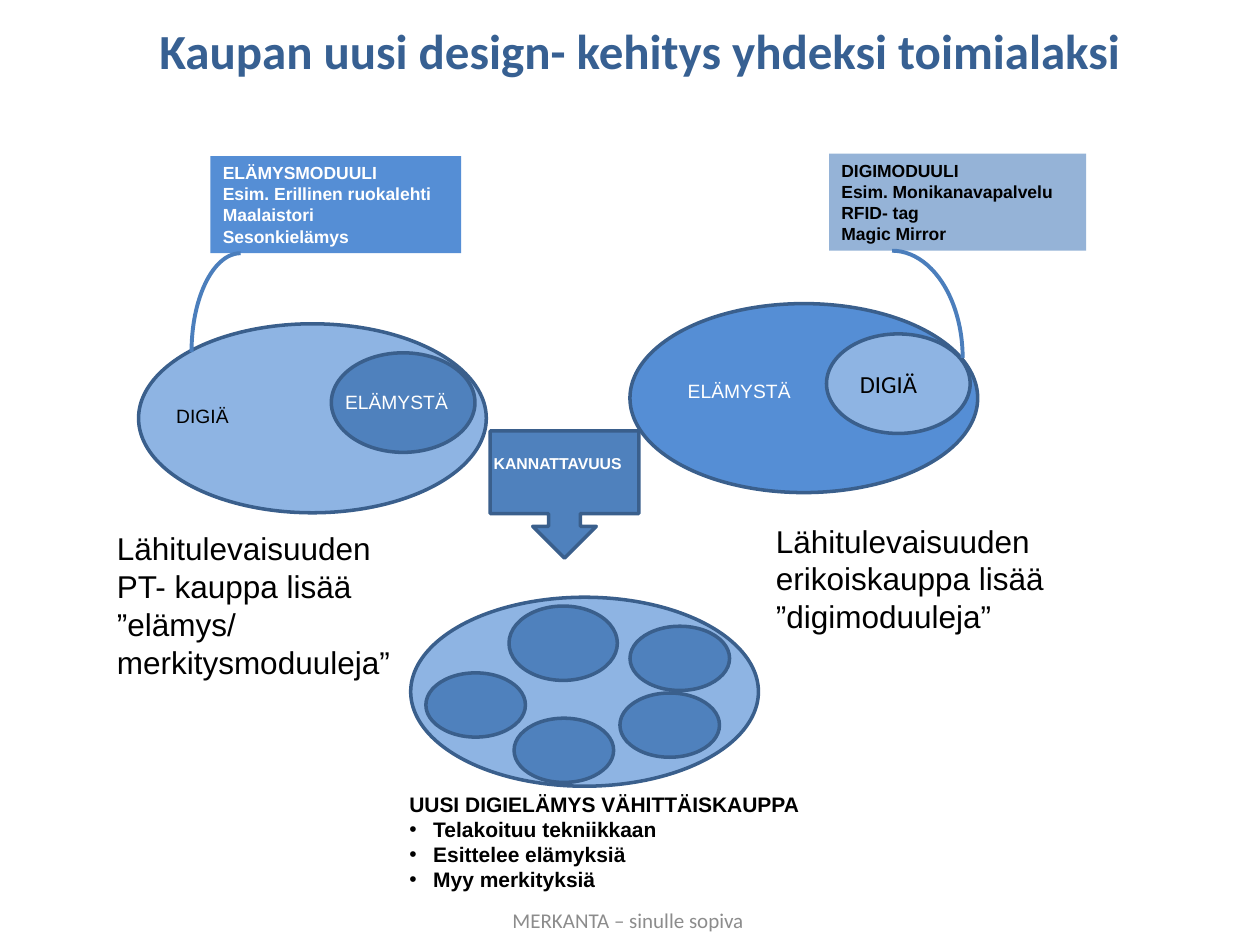
from lxml import etree
from pptx import Presentation
from pptx.dml.color import RGBColor
from pptx.enum.shapes import MSO_SHAPE
from pptx.enum.text import MSO_ANCHOR, PP_ALIGN
from pptx.oxml.ns import qn
from pptx.util import Inches, Pt

ELLIPSE = MSO_SHAPE.OVAL
RECTANGLE = MSO_SHAPE.RECTANGLE
ARC = MSO_SHAPE.ARC
CALLOUT = MSO_SHAPE.DOWN_ARROW_CALLOUT
TOP, MIDDLE = MSO_ANCHOR.TOP, MSO_ANCHOR.MIDDLE
LEFT, CENTER = PP_ALIGN.LEFT, PP_ALIGN.CENTER

COLUMNS, ROWS = 100, 75
BLACK, WHITE = "000000", "FFFFFF"
LIGHT, STRONG, DEEP = "8EB4E3", "558ED5", "4F81BD"
OUTLINE, CURVE = "3A5F8C", "4B7EBC"
LARGE_OVAL = (27.6, 15)
MODULE_OVAL = (11.4, 7.9)
SMALL_OVAL = (7.9, 5.1)


def color(value):
    return RGBColor.from_string(value)


class SlideBuilder:
    def __init__(self, deck):
        self.slide = deck.slides.add_slide(deck.slide_layouts[6])
        self.column = deck.slide_width / COLUMNS
        self.row = deck.slide_height / ROWS

    def frame(self, left, top, width, height):
        return (round(left * self.column), round(top * self.row),
                round(width * self.column), round(height * self.row))

    def shape(self, kind, place, fill=None, line=None, weight=2):
        shape = self.slide.shapes.add_shape(kind, *self.frame(*place))
        shape.shadow.inherit = False
        if fill:
            shape.fill.solid()
            shape.fill.fore_color.rgb = color(fill)
        else:
            shape.fill.background()
        if line:
            shape.line.color.rgb = color(line)
            shape.line.width = Pt(weight)
        else:
            shape.line.fill.background()
        return shape

    def oval(self, left, top, size, fill):
        return self.shape(ELLIPSE, (left, top, *size), fill, OUTLINE)

    def curve(self, place, mirrored=False):
        arc = self.shape(ARC, place, line=CURVE, weight=2.25)
        if mirrored:
            arc.element.spPr.find(qn("a:xfrm")).set("flipH", "1")

    def text(self, place, lines, size, **style):
        box = self.slide.shapes.add_textbox(*self.frame(*place))
        self.label(box, lines, size, **style)

    def module(self, place, lines, fill, ink):
        self.label(self.shape(RECTANGLE, place, fill), lines, 10, ink=ink, bold=True)

    def label(self, holder, lines, size, ink=BLACK, font="Arial", bold=False,
              align=LEFT, anchor=TOP, bullets_from=None):
        frame = holder.text_frame
        frame.text = "\n".join(lines)
        frame.word_wrap = True
        frame.vertical_anchor = anchor
        for index, paragraph in enumerate(frame.paragraphs):
            paragraph.alignment = align
            if bullets_from is not None and index >= bullets_from:
                self.bullet(paragraph)
            for run in paragraph.runs:
                run.font.name = font
                run.font.size = Pt(size)
                run.font.bold = bold
                run.font.color.rgb = color(ink)

    def bullet(self, paragraph):
        properties = paragraph._p.get_or_add_pPr()
        indent = Inches(0.19)
        properties.set("marL", str(indent))
        properties.set("indent", str(-indent))
        etree.SubElement(properties, qn("a:buFont")).set("typeface", "Arial")
        etree.SubElement(properties, qn("a:buChar")).set("char", "•")


def main():
    deck = Presentation()
    deck.slide_width, deck.slide_height = Inches(10), Inches(7.5)
    page = SlideBuilder(deck)

    page.text((-2.1, 0, 105.7, 7.9), ["Kaupan uusi design- kehitys yhdeksi toimialaksi"],
              28, ink="376092", font="Calibri", bold=True, align=CENTER, anchor=MIDDLE)
    page.text((34, 71, 31.7, 4), ["MERKANTA – sinulle sopiva"],
              12, ink="8C8C8C", font="Calibri", align=CENTER, anchor=MIDDLE)

    page.oval(11, 25.7, LARGE_OVAL, LIGHT)
    page.oval(26.3, 28, MODULE_OVAL, DEEP)
    page.oval(50, 24.1, LARGE_OVAL, STRONG)
    digital_module = page.oval(65.6, 26.5, MODULE_OVAL, LIGHT)
    page.label(digital_module, ["DIGIÄ"], 14, font="Calibri", anchor=MIDDLE)

    page.text((8.3, 41.5, 26.7, 10.1),
              ["Lähitulevaisuuden PT- kauppa lisää ”elämys/ merkitysmoduuleja”"], 18)
    page.text((60.6, 40.9, 24, 10.1),
              ["Lähitulevaisuuden erikoiskauppa lisää ”digimoduuleja”"], 18)
    page.text((13, 31.6, 10.1, 2.9), ["DIGIÄ"], 11)
    for left, top, width in ((26.4, 30.5, 12.3), (53.6, 29.6, 10.2)):
        page.text((left, top, width, 2.9), ["ELÄMYSTÄ"], 11, ink=WHITE)

    page.oval(32.6, 47.4, LARGE_OVAL, LIGHT)
    page.oval(40.4, 48.1, (8.6, 5.9), DEEP)
    for left, top in ((50, 49.7), (49.2, 55), (40.8, 57), (33.8, 53.4)):
        page.oval(left, top, SMALL_OVAL, DEEP)

    page.shape(CALLOUT, (38.9, 34.2, 11.8, 10.1), DEEP, OUTLINE)
    page.text((31.5, 62.3, 34.3, 9.1),
              ["UUSI DIGIELÄMYS VÄHITTÄISKAUPPA", "Telakoituu tekniikkaan",
               "Esittelee elämyksiä", "Myy merkityksiä"],
              12, bold=True, bullets_from=1)

    page.module((16.7, 12.4, 19.9, 7.7),
                ["ELÄMYSMODUULI", "Esim. Erillinen ruokalehti", "Maalaistori",
                 "Sesonkielämys"], STRONG, WHITE)
    page.curve((15.2, 20.1, 7.8, 15.7), mirrored=True)
    page.module((65.8, 12.2, 20.4, 7.7),
                ["DIGIMODUULI", "Esim. Monikanavapalvelu", "RFID- tag",
                 "Magic Mirror"], "95B3D7", BLACK)
    page.curve((65.2, 19.9, 11.2, 17))
    page.text((38.2, 35.5, 13.1, 2.5), ["KANNATTAVUUS"], 9, ink=WHITE, bold=True)

    deck.save("out.pptx")


if __name__ == "__main__":
    main()
